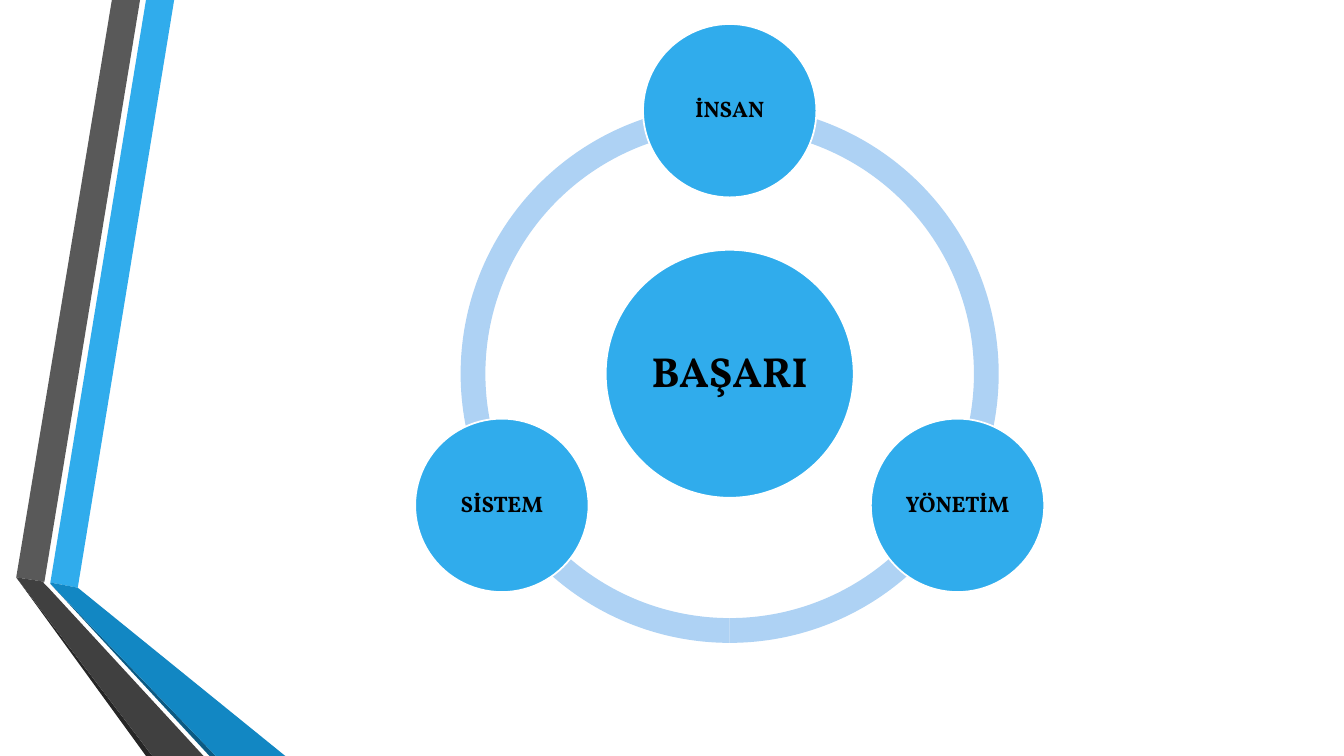
import math
from dataclasses import dataclass

import pptx
import pptx.dml.color
import pptx.enum.shapes
import pptx.enum.text
import pptx.util

Cm = pptx.util.Cm
SHAPES = pptx.enum.shapes.MSO_SHAPE

BLUE, PALE_BLUE, WHITE, BLACK = "30ACEC", "AED2F4", "FFFFFF", "000000"
CENTER_X, CENTER_Y = 18.39, 9.42
RING_SIZE, ORBIT_RADIUS = 13.56, 6.63


@dataclass
class Ribbon:
    color: str
    points: list[tuple[int, int]]  # hundredths of a centimetre


@dataclass
class Bubble:
    label: str
    x: float
    y: float
    size: float
    font_size: int
    inset: float


def rgb(color: str) -> pptx.dml.color.RGBColor:
    return pptx.dml.color.RGBColor.from_string(color)


def paint(shape, fill: str, line: str | None = None) -> None:
    shape.shadow.inherit = False
    shape.fill.solid()
    shape.fill.fore_color.rgb = rgb(fill)
    if line:
        shape.line.color.rgb = rgb(line)
        shape.line.width = pptx.util.Pt(1.25)
    else:
        shape.line.fill.background()


def write(shape, text: str, *, size: int, inset: float,
          color: str = BLACK, font: str = "Vollkorn") -> None:
    frame = shape.text_frame
    frame.word_wrap = True
    frame.vertical_anchor = pptx.enum.text.MSO_ANCHOR.MIDDLE
    frame.margin_left = frame.margin_right = Cm(inset)
    frame.margin_top = frame.margin_bottom = Cm(inset)
    paragraph = frame.paragraphs[0]
    paragraph.alignment = pptx.enum.text.PP_ALIGN.CENTER
    paragraph.line_spacing = 0.9
    run = paragraph.add_run()
    run.text = text
    run.font.name = font
    run.font.size = pptx.util.Pt(size)
    run.font.bold = True
    run.font.color.rgb = rgb(color)


def add_centered(slide, kind, x: float, y: float, size: float):
    return slide.shapes.add_shape(
        kind, Cm(x - size / 2), Cm(y - size / 2), Cm(size), Cm(size))


def draw_ribbon(slide, ribbon: Ribbon) -> None:
    builder = slide.shapes.build_freeform(*ribbon.points[0], scale=Cm(0.01))
    builder.add_line_segments(ribbon.points[1:], close=True)
    paint(builder.convert_to_shape(), ribbon.color)


def draw_arc(slide, start: int, end: int) -> None:
    arc = add_centered(slide, SHAPES.BLOCK_ARC, CENTER_X, CENTER_Y, RING_SIZE)
    # Angles are stored in 1/60000 degree, adjustments in 1/100000
    arc.adjustments[0] = start * 0.6
    arc.adjustments[1] = end * 0.6
    arc.adjustments[2] = 0.046
    paint(arc, PALE_BLUE)


def draw_bubble(slide, bubble: Bubble) -> None:
    circle = add_centered(slide, SHAPES.OVAL, bubble.x, bubble.y, bubble.size)
    paint(circle, BLUE, WHITE)
    write(circle, bubble.label, size=bubble.font_size, inset=bubble.inset)


def main() -> None:
    presentation = pptx.Presentation()
    presentation.slide_width, presentation.slide_height = Cm(33.87), Cm(19.05)
    slide = presentation.slides.add_slide(presentation.slide_layouts[6])

    # Folded ribbons on the left edge
    ribbons = [
        Ribbon(BLUE, [(127, 1468), (196, 1481), (439, 0), (368, 0)]),
        Ribbon("595959", [(353, 0), (282, 0), (41, 1455), (112, 1466)]),
        Ribbon("262626", [(41, 1455), (368, 1905), (384, 1905)]),
        Ribbon("0C5A82", [(127, 1471), (528, 1905), (544, 1905)]),
        Ribbon("1287C3", [(127, 1468), (127, 1471), (544, 1905),
                          (719, 1905), (196, 1481)]),
        Ribbon("404040", [(513, 1905), (122, 1481), (109, 1468), (112, 1466),
                          (41, 1455), (384, 1905)]),
    ]
    for ribbon in ribbons:
        draw_ribbon(slide, ribbon)

    # Ring behind the bubbles
    for start, end in [(90, 162), (18, 90), (162, 18)]:
        draw_arc(slide, start, end)

    # Success in the middle, its three factors evenly around it
    draw_bubble(slide, Bubble("BAŞARI", CENTER_X, CENTER_Y, 6.25, 30, 0.1))
    factors = ["İNSAN", "YÖNETİM", "SİSTEM"]
    for index, factor in enumerate(factors):
        angle = math.tau * index / len(factors)
        x = CENTER_X + ORBIT_RADIUS * math.sin(angle)
        y = CENTER_Y - ORBIT_RADIUS * math.cos(angle)
        draw_bubble(slide, Bubble(factor, x, y, 4.37, 16, 0.05))

    presentation.save("out.pptx")


if __name__ == "__main__":
    main()
